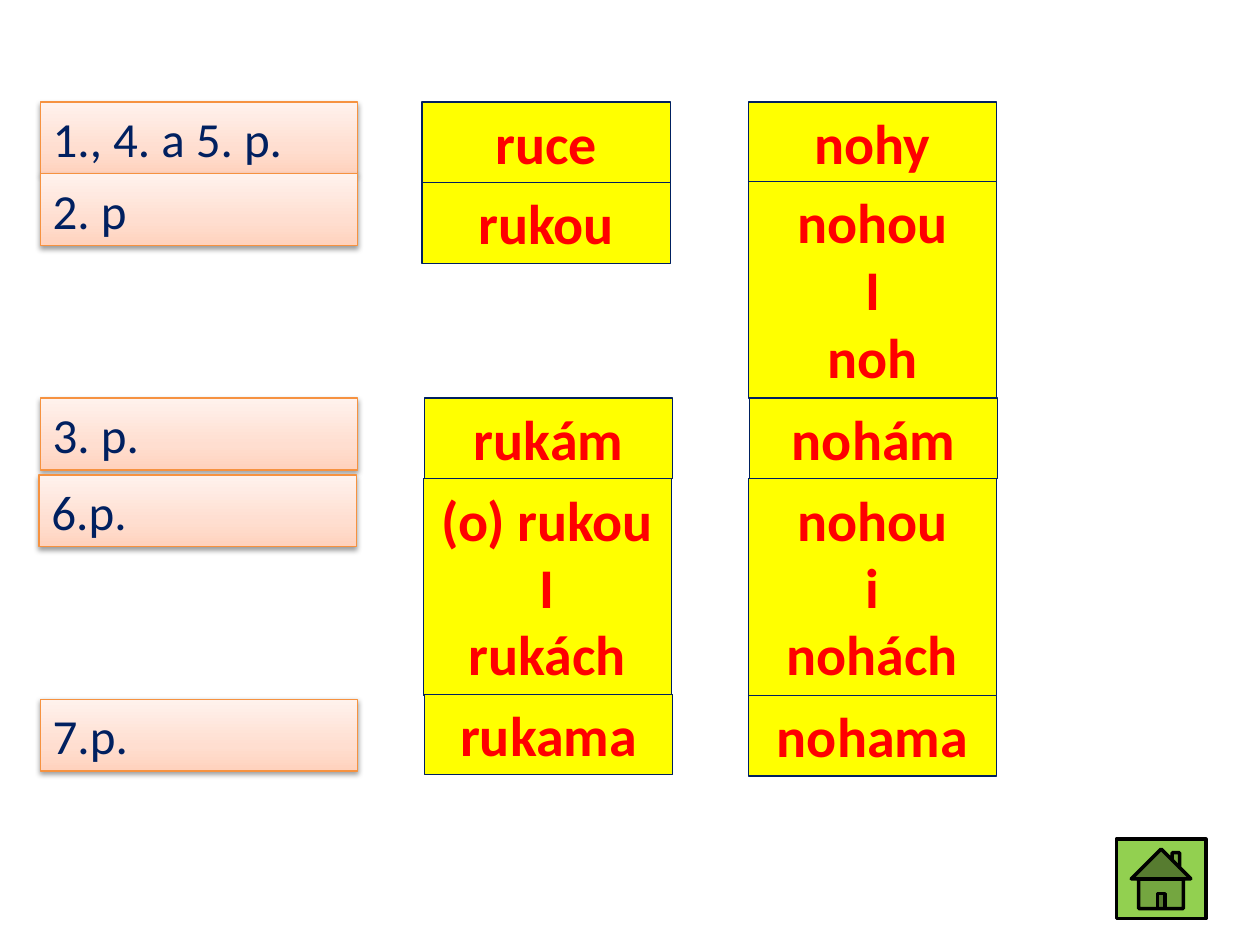
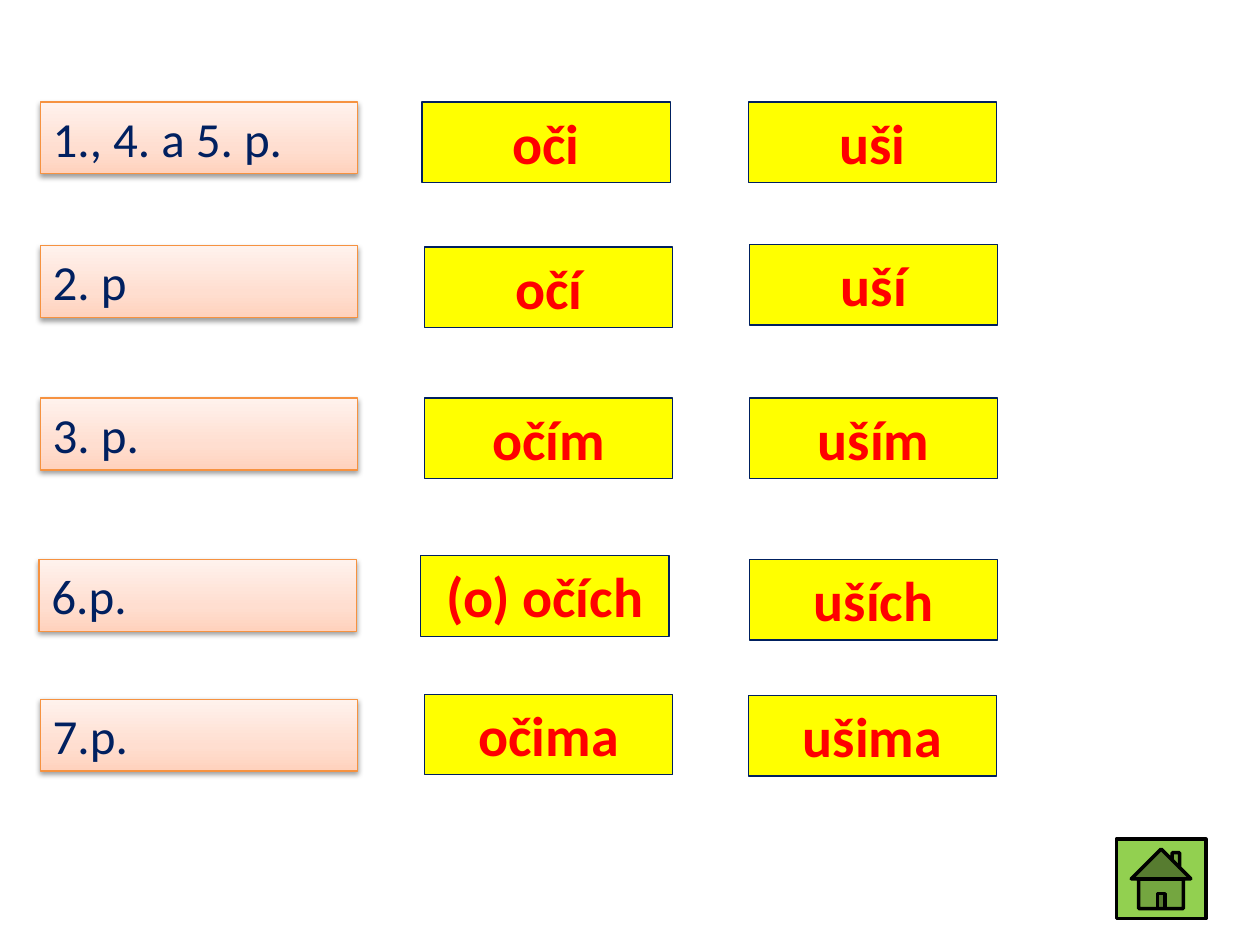
from lxml.etree import SubElement
from pptx import Presentation
from pptx.dml.color import RGBColor
from pptx.enum.shapes import MSO_SHAPE
from pptx.enum.text import MSO_ANCHOR, MSO_AUTO_SIZE, PP_ALIGN
from pptx.oxml.ns import qn
from pptx.util import Inches, Pt

COLORS = {
    "navy": "002060", "orange": "F69240", "yellow": "FFFF00", "red": "FF0000",
    "green": "92D050", "black": "000000",
}
PEACH_STOPS = [(0, "FFD2BD"), (35, "FFDED0"), (100, "FFF2ED")]
FONT = "Calibri"
CASES = ["1., 4. a 5. p.", "2. p", "3. p.", "6.p.", "7.p."]
CASE_LEFTS = [0.32, 0.32, 0.32, 0.31, 0.32]
CASE_SIZE = (2.52, 0.57)
FORM_WIDTH, FORM_LINE, FORM_PADDING = 1.97, 0.54, 0.1
HOME_PLACE = (8.86, 6.66, 0.71, 0.63)

SLIDES = [
    {
        "case_tops": [0.81, 1.38, 3.16, 3.77, 5.55],
        "forms": [
            (3.35, 0.81, ["ruce"]),
            (3.35, 1.45, ["rukou"]),
            (3.37, 3.16, ["rukám"]),
            (3.36, 3.8, ["(o) rukou", "I", "rukách"]),
            (3.37, 5.51, ["rukama"]),
            (5.94, 0.81, ["nohy"]),
            (5.94, 1.44, ["nohou", "I", "noh"]),
            (5.95, 3.16, ["nohám"]),
            (5.94, 3.8, ["nohou", "i", "nohách"]),
            (5.94, 5.52, ["nohama"]),
        ],
    },
    {
        "case_tops": [0.81, 1.95, 3.16, 4.44, 5.55],
        "forms": [
            (3.35, 0.81, ["oči"]),
            (3.37, 1.96, ["očí"]),
            (3.37, 3.16, ["očím"]),
            (3.34, 4.41, ["(o) očích"]),
            (3.37, 5.51, ["očima"]),
            (5.94, 0.81, ["uši"]),
            (5.95, 1.94, ["uší"]),
            (5.95, 3.16, ["uším"]),
            (5.95, 4.44, ["uších"]),
            (5.94, 5.52, ["ušima"]),
        ],
    },
]


def color(name):
    return RGBColor.from_string(COLORS[name])


def add_box(page, kind, place, fill, line, width):
    box = page.shapes.add_shape(kind, *map(Inches, place))
    box.shadow.inherit = False
    box.line.color.rgb = color(line)
    box.line.width = Pt(width)
    if fill:
        box.fill.solid()
        box.fill.fore_color.rgb = color(fill)
    return box


def write(box, lines, size, ink, align, bold):
    frame = box.text_frame
    frame.word_wrap = True
    frame.auto_size = MSO_AUTO_SIZE.SHAPE_TO_FIT_TEXT
    frame.vertical_anchor = MSO_ANCHOR.TOP
    for index, line in enumerate(lines):
        para = frame.add_paragraph() if index else frame.paragraphs[0]
        para.alignment = align
        span = para.add_run()
        span.text = line
        span.font.name = FONT
        span.font.size = Pt(size)
        span.font.bold = bold
        span.font.color.rgb = color(ink)


def add_peach_finish(box):
    box.fill.gradient()
    box.fill.gradient_angle = 90
    properties = box.element.spPr
    stops = properties.find(".//" + qn("a:gsLst"))
    stops.clear()
    for position, tint in PEACH_STOPS:
        stop = SubElement(stops, qn("a:gs"), pos=str(position * 1000))
        SubElement(stop, qn("a:srgbClr"), val=tint)
    shadow = SubElement(
        properties.find(qn("a:effectLst")), qn("a:outerShdw"),
        blurRad=str(Pt(3.1)), dist=str(Pt(1.6)), dir="5400000", rotWithShape="0",
    )
    shade = SubElement(shadow, qn("a:srgbClr"), val=COLORS["black"])
    SubElement(shade, qn("a:alpha"), val="38000")


def add_case(page, left, top, label):
    box = add_box(page, MSO_SHAPE.RECTANGLE, (left, top, *CASE_SIZE), None, "orange", 0.75)
    add_peach_finish(box)
    write(box, [label], 28, "navy", PP_ALIGN.LEFT, False)


def add_form(page, left, top, lines):
    height = FORM_PADDING + FORM_LINE * len(lines)
    place = (left, top, FORM_WIDTH, height)
    box = add_box(page, MSO_SHAPE.RECTANGLE, place, "yellow", "navy", 0.75)
    write(box, lines, 32, "red", PP_ALIGN.CENTER, True)


def main():
    """Build the declension slides for paired body parts."""
    deck = Presentation()
    deck.slide_width, deck.slide_height = Inches(10), Inches(7.5)
    for content in SLIDES:
        page = deck.slides.add_slide(deck.slide_layouts[6])
        for case in zip(CASE_LEFTS, content["case_tops"], CASES):
            add_case(page, *case)
        for form in content["forms"]:
            add_form(page, *form)
        add_box(page, MSO_SHAPE.ACTION_BUTTON_HOME, HOME_PLACE, "green", "black", 2)
    deck.save("out.pptx")


if __name__ == "__main__":
    main()
